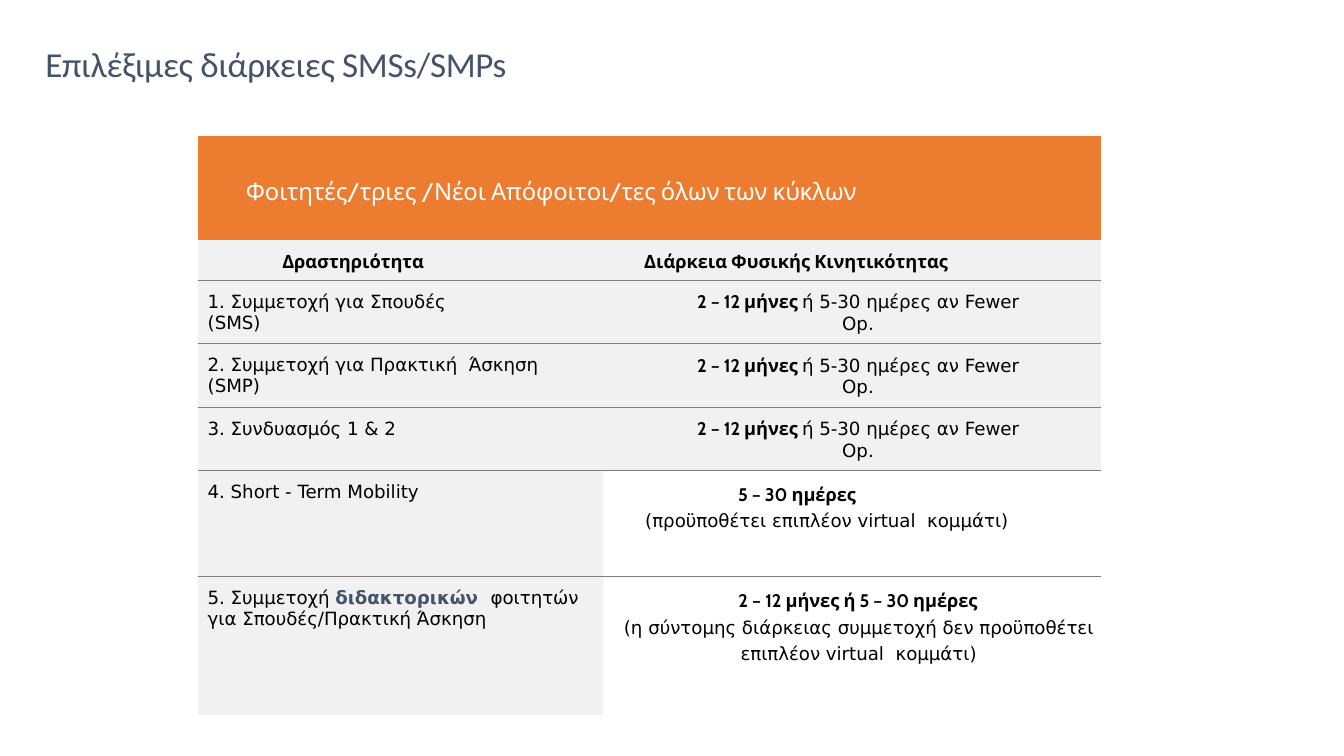
from lxml import etree
from pptx import Presentation
from pptx.dml.color import RGBColor
from pptx.enum import text
from pptx.oxml import ns
from pptx.util import Emu, Pt

PX = 9144  # 100 px to the inch
ORANGE, GREY, RULE = "EC7C30", "F1F1F1", "7E7E7E"
SLATE, BLACK, WHITE = "44536A", "000000", "FFFFFF"
BODY, STRONG = "DejaVu Sans", "Cabin"
COLUMNS = [402, 494]
ROWS = [103, 40, 63, 63, 63, 105, 137]
CENTER = text.PP_ALIGN.CENTER


def px(length):
    return Emu(length * PX)


def color(value):
    return RGBColor.from_string(value)


def plain(words):
    return words, BODY, False, BLACK


def strong(words):
    return words, STRONG, True, BLACK


def line(*spans, indent=10, before=0, align=None, spacing=None):
    """Describe one paragraph; before is in points, indent in px."""
    return spans, indent, before, align, spacing


def write_line(para, spec_line, size, tracking=0):
    spans, indent, before, align, spacing = spec_line
    para.alignment = align or text.PP_ALIGN.LEFT
    para.space_before = Pt(before)
    if spacing:
        para.line_spacing = spacing
    properties = para._p.get_or_add_pPr()
    properties.set("marL", str(px(indent)))
    properties.set("indent", "0")
    for words, face, bold, ink in spans:
        span = para.add_run()
        span.text = words
        span.font.name, span.font.size, span.font.bold = face, Pt(size), bold
        span.font.color.rgb = color(ink)
        if tracking:
            span._r.get_or_add_rPr().set("spc", str(tracking))


def set_borders(cell, top, bottom):
    """Rule the top and bottom edges as asked and clear the other edges."""
    properties = cell._tc.get_or_add_tcPr()
    edges = {"lnL": False, "lnR": False, "lnT": top, "lnB": bottom}
    for position, (tag, ruled) in enumerate(edges.items()):
        edge = etree.Element(ns.qn("a:" + tag), w="9525")
        if ruled:
            fill = etree.SubElement(edge, ns.qn("a:solidFill"))
            etree.SubElement(fill, ns.qn("a:srgbClr"), val=RULE)
        else:
            etree.SubElement(edge, ns.qn("a:noFill"))
        properties.insert(position, edge)


def fill_cell(cell, lines, fill, top_inset, right_inset=0, size=13, tracking=0):
    cell.margin_left = cell.margin_bottom = 0
    cell.margin_top, cell.margin_right = px(top_inset), px(right_inset)
    cell.vertical_anchor = text.MSO_ANCHOR.TOP
    if fill:
        cell.fill.solid()
        cell.fill.fore_color.rgb = color(fill)
    else:
        cell.fill.background()
    frame = cell.text_frame
    for index, item in enumerate(lines):
        para = frame.add_paragraph() if index else frame.paragraphs[0]
        write_line(para, item, size, tracking)


def duration_rows():
    """Pair the activity paragraphs with the duration paragraphs."""
    months = [
        line(strong("2 – 12 μήνες "), plain("ή 5-30 ημέρες αν Fewer"),
             indent=12, before=7.8, align=CENTER),
        line(plain("Op."), indent=12, align=CENTER),
    ]
    short_term = [
        line(strong("5 – 30 ημέρες"), indent=134, before=9.2),
        line(plain("(προϋποθέτει επιπλέον virtual  κομμάτι)"),
             indent=42, spacing=1.22),
    ]
    doctoral = [
        line(strong("2 – 12 μήνες ή 5 – 30 ημέρες"),
             indent=12, before=9.2, align=CENTER),
        line(plain("(η σύντομης διάρκειας συμμετοχή δεν προϋποθέτει"),
             indent=13, before=4.3, align=CENTER),
        line(plain("επιπλέον virtual  κομμάτι)"),
             indent=13, before=3.5, align=CENTER),
    ]
    return [
        ([line(strong("Δραστηριότητα"), indent=84, before=7.8)],
         [line(strong("Διάρκεια Φυσικής Κινητικότητας"), indent=41, before=7.8)]),
        ([line(plain("1. Συμμετοχή για Σπουδές"), before=7.8),
          line(plain("(SMS)"))], months),
        ([line(plain("2. Συμμετοχή για Πρακτική  Άσκηση (SMP)"), before=7.8)],
         months),
        ([line(plain("3. Συνδυασμός 1 & 2"), before=7.8)], months),
        ([line(plain("4. Short - Term Mobility"), before=7.9)], short_term),
        ([line(plain("5. Συμμετοχή "), ("διδακτορικών  ", BODY, True, SLATE),
               plain("φοιτητών για Σπουδές/Πρακτική Άσκηση"), before=7.9)],
         doctoral),
    ]


def place_title(page, left, top, width, height):
    title = page.shapes.title
    title.left, title.top = px(left), px(top)
    title.width, title.height = px(width), px(height)
    frame = title.text_frame
    frame.margin_left = frame.margin_right = frame.margin_bottom = 0
    frame.margin_top = px(14)
    frame.word_wrap = True
    frame.auto_size = text.MSO_AUTO_SIZE.NONE
    frame.vertical_anchor = text.MSO_ANCHOR.TOP
    words = "Επιλέξιμες διάρκειες SMSs/SMPs"
    write_line(frame.paragraphs[0],
               line((words, "Calibri", False, SLATE),
                    indent=1, before=9.9, spacing=0.7), 25, -20)


def place_durations(page, left, top):
    grid = page.shapes.add_table(len(ROWS), len(COLUMNS), px(left), px(top),
                                 px(sum(COLUMNS)), px(sum(ROWS))).table
    grid.first_row = grid.horz_banding = False
    for column, width in zip(grid.columns, COLUMNS):
        column.width = px(width)
    for row, height in zip(grid.rows, ROWS):
        row.height = px(height)

    banner = grid.cell(0, 0)
    banner.merge(grid.cell(0, 1))
    heading = "Φοιτητές/τριες /Νέοι Απόφοιτοι/τες όλων των κύκλων"
    fill_cell(banner, [line((heading, STRONG, False, WHITE), indent=48)],
              ORANGE, 41, size=17, tracking=-10)

    for number, (activity, duration) in enumerate(duration_rows(), 1):
        shaded = number < 5
        fill_cell(grid.cell(number, 0), activity, GREY, 11, right_inset=15)
        fill_cell(grid.cell(number, 1), duration, GREY if shaded else None,
                  11 if shaded else 13)

    last = len(ROWS) - 1
    for number in range(len(ROWS)):
        for column in range(len(COLUMNS)):
            set_borders(grid.cell(number, column),
                        top=number > 1, bottom=0 < number < last)


def main():
    deck = Presentation()
    deck.slide_width, deck.slide_height = px(1333), px(750)
    page = deck.slides.add_slide(deck.slide_layouts[5])
    place_title(page, 44, 40, 464, 45)
    place_durations(page, 196, 135)
    deck.save("out.pptx")


if __name__ == "__main__":
    main()
